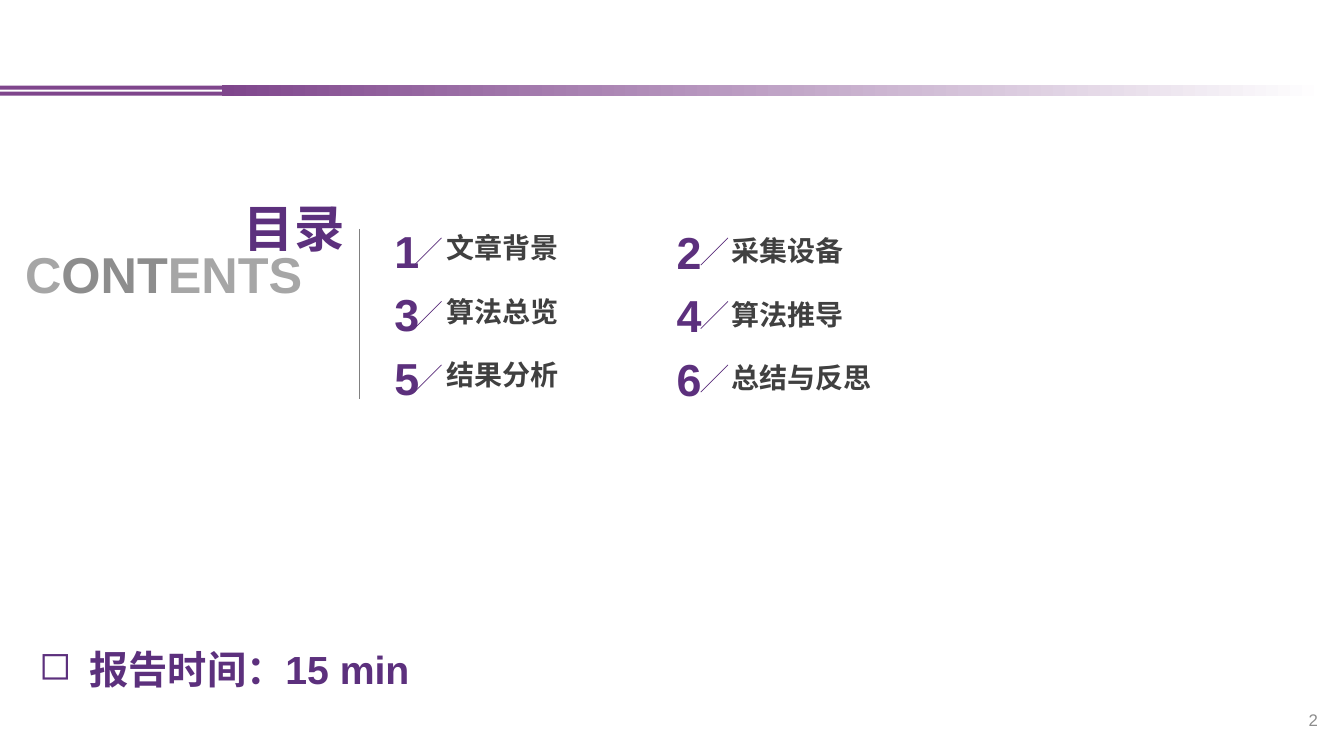
from lxml.etree import SubElement
from pptx import Presentation
from pptx.dml.color import RGBColor
from pptx.enum.shapes import MSO_CONNECTOR, MSO_SHAPE
from pptx.enum.text import MSO_ANCHOR, PP_ALIGN
from pptx.oxml.ns import qn
from pptx.util import Inches, Pt

PURPLE = RGBColor(0x5C, 0x30, 0x7D)
BAND = RGBColor(0x7F, 0x46, 0x8C)
WHITE = RGBColor(0xFF, 0xFF, 0xFF)
DARK = RGBColor(0x40, 0x40, 0x40)
GRAY = RGBColor(0x80, 0x80, 0x80)
MID = RGBColor(0x8D, 0x8D, 0x8D)
LIGHT = RGBColor(0xA6, 0xA6, 0xA6)
PAGE = RGBColor(0x8C, 0x8C, 0x8C)

deck = Presentation()
deck.slide_width, deck.slide_height = Inches(13.33), Inches(7.5)
slide = deck.slides.add_slide(deck.slide_layouts[6])


def add_text(runs, left, top, width, height, size, bold=True, wrap=False,
             align=PP_ALIGN.LEFT, anchor=MSO_ANCHOR.TOP, bullet=None):
    """Add a one-paragraph text box; runs is a list of (text, color)."""
    box = slide.shapes.add_textbox(Inches(left), Inches(top),
                                   Inches(width), Inches(height))
    frame = box.text_frame
    frame.word_wrap = wrap
    frame.vertical_anchor = anchor
    para = frame.paragraphs[0]
    para.alignment = align
    if bullet:
        props = para._p.get_or_add_pPr()
        props.set("marL", str(Inches(0.5)))
        props.set("indent", str(Inches(-0.5)))
        SubElement(props, qn("a:buChar")).set("char", bullet)
    for text, color in runs:
        run = para.add_run()
        run.text = text
        run.font.name = "Arial"
        run.font.size = Pt(size)
        run.font.bold = bold
        run.font.color.rgb = color


def add_line(x1, y1, x2, y2, color):
    line = slide.shapes.add_connector(MSO_CONNECTOR.STRAIGHT, Inches(x1),
                                      Inches(y1), Inches(x2), Inches(y2))
    line.line.color.rgb = color
    line.line.width = Pt(0.5)
    SubElement(line._element.spPr, qn("a:effectLst"))


# Header band: two thin bars that run into one fading bar
for left, top, width, height, fade in [(0, 0.85, 2.22, 0.04, False),
                                       (0, 0.91, 2.22, 0.04, False),
                                       (2.2, 0.84, 10.95, 0.11, True)]:
    bar = slide.shapes.add_shape(MSO_SHAPE.RECTANGLE, Inches(left), Inches(top),
                                 Inches(width), Inches(height))
    bar.shadow.inherit = False
    bar.line.fill.background()
    if fade:
        bar.fill.gradient()
        bar.fill.gradient_angle = 0
        for stop, color in zip(bar.fill.gradient_stops, (BAND, WHITE)):
            stop.color.rgb = color
        bar.fill.gradient_stops[1].position = 1
    else:
        bar.fill.solid()
        bar.fill.fore_color.rgb = BAND

# Heading
add_text([("C", LIGHT), ("ONT", MID), ("ENTS", LIGHT)],
         0.15, 2.36, 3.42, 0.71, 36, wrap=True)
add_text([("目录", PURPLE)], 2.32, 1.91, 1.21, 0.71, 36)
add_line(3.56, 2.27, 3.56, 3.96, GRAY)

# Topics, numbered across two columns
topics = ["文章背景", "采集设备", "算法总览", "算法推导", "结果分析", "总结与反思"]
columns = [(3.81, 2.17, 4.33, 2.24, 4.11), (6.61, 2.18, 7.16, 2.27, 6.95)]
for index, topic in enumerate(topics):
    row, col = divmod(index, 2)
    num_x, num_y, text_x, text_y, slash = columns[col]
    drop = row * 0.63
    add_text([(str(index + 1), PURPLE)], num_x, num_y + drop, 0.45, 0.64, 32,
             align=PP_ALIGN.CENTER)
    add_text([(topic, DARK)], text_x, text_y + drop,
             0.2 + 0.28 * len(topic), 0.44, 20)
    add_line(slash + 0.27, 2.36 + drop, slash, 2.63 + drop, PURPLE)

# Talk length and page number
add_text([("报告时间：15 min", PURPLE)], 0.29, 6.35, 4.42, 0.71, 28,
         wrap=True, bullet="◻")
add_text([("2", PAGE)], 12.73, 6.94, 0.44, 0.4, 12, bold=False, wrap=True,
         align=PP_ALIGN.RIGHT, anchor=MSO_ANCHOR.MIDDLE)

deck.save("out.pptx")
